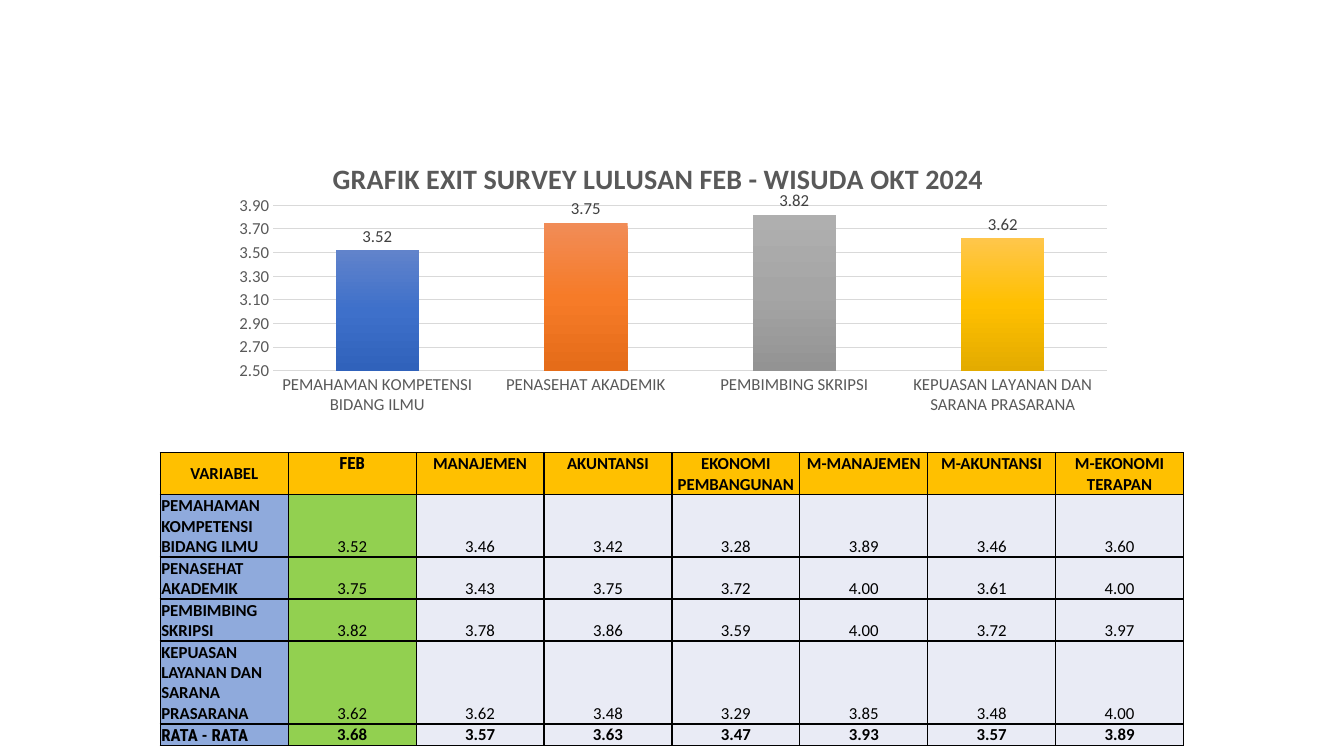
from lxml import etree
from pptx import Presentation
from pptx.chart.data import CategoryChartData
from pptx.dml.color import RGBColor
from pptx.enum.chart import XL_CHART_TYPE, XL_LABEL_POSITION, XL_TICK_MARK
from pptx.enum.text import MSO_ANCHOR, PP_ALIGN
from pptx.oxml import parse_xml
from pptx.oxml.ns import nsdecls
from pptx.util import Inches, Pt

COLUMN = XL_CHART_TYPE.COLUMN_CLUSTERED
OUTSIDE_END = XL_LABEL_POSITION.OUTSIDE_END
NO_TICK = XL_TICK_MARK.NONE
TOP, MIDDLE, BOTTOM = MSO_ANCHOR.TOP, MSO_ANCHOR.MIDDLE, MSO_ANCHOR.BOTTOM
LEFT, CENTER = PP_ALIGN.LEFT, PP_ALIGN.CENTER

BLACK = RGBColor(0x00, 0x00, 0x00)
GRAY = RGBColor(0x59, 0x59, 0x59)
DARK_GRAY = RGBColor(0x40, 0x40, 0x40)
GRID_GRAY = RGBColor(0xD9, 0xD9, 0xD9)
GOLD = RGBColor(0xFF, 0xC0, 0x00)
BLUE = RGBColor(0x8F, 0xAA, 0xDC)
GREEN = RGBColor(0x92, 0xD0, 0x50)
PALE = RGBColor(0xE9, 0xEB, 0xF5)
BAR_GRADIENTS = [
    (RGBColor(0x61, 0x83, 0xCB), RGBColor(0x3E, 0x70, 0xCA), RGBColor(0x30, 0x62, 0xBB)),
    (RGBColor(0xF1, 0x8C, 0x57), RGBColor(0xF6, 0x7B, 0x28), RGBColor(0xE5, 0x6C, 0x19)),
    (RGBColor(0xAF, 0xAF, 0xAF), RGBColor(0xA5, 0xA5, 0xA5), RGBColor(0x93, 0x93, 0x93)),
    (RGBColor(0xFF, 0xC6, 0x4B), RGBColor(0xFF, 0xC0, 0x00), RGBColor(0xE3, 0xAB, 0x00)),
]

BODY_FONT = "Calibri"
ACCENT_FONT = "Roboto Condensed"
CHART_BOX = (2.17, 1.33, 8.99, 2.83)
TABLE_BOX = (1.59, 4.49, 10.15, 2.83)
ROW_HEIGHTS = [0.32, 0.48, 0.32, 0.24, 0.56, 0.16]
TITLE = "GRAFIK EXIT SURVEY LULUSAN FEB - WISUDA OKT 2024"
HEADERS = ["VARIABEL", "FEB", "MANAJEMEN", "AKUNTANSI", "EKONOMI PEMBANGUNAN",
           "M-MANAJEMEN", "M-AKUNTANSI", "M-EKONOMI TERAPAN"]
SCORES = {
    "PEMAHAMAN KOMPETENSI BIDANG ILMU": [3.52, 3.46, 3.42, 3.28, 3.89, 3.46, 3.60],
    "PENASEHAT AKADEMIK": [3.75, 3.43, 3.75, 3.72, 4.00, 3.61, 4.00],
    "PEMBIMBING SKRIPSI": [3.82, 3.78, 3.86, 3.59, 4.00, 3.72, 3.97],
    "KEPUASAN LAYANAN DAN SARANA PRASARANA": [3.62, 3.62, 3.48, 3.29, 3.85, 3.48, 4.00],
}
AVERAGE_LABEL = "RATA - RATA"
AVERAGES = [3.68, 3.57, 3.63, 3.47, 3.93, 3.57, 3.89]


def set_font(font, size, color, bold=False, name=BODY_FONT):
    font.name = name
    font.size = Pt(size)
    font.bold = bold
    font.color.rgb = color


def layout_xml(x, y, size=None):
    parts = '<c:layoutTarget val="inner"/>' if size else ""
    parts += '<c:xMode val="edge"/><c:yMode val="edge"/>'
    parts += f'<c:x val="{x}"/><c:y val="{y}"/>'
    if size:
        parts += f'<c:w val="{size[0]}"/><c:h val="{size[1]}"/>'
    return parse_xml(f'<c:layout {nsdecls("c")}><c:manualLayout>{parts}</c:manualLayout></c:layout>')


def place_chart_parts(chart):
    title = chart._chartSpace.xpath("c:chart/c:title")[0]
    plot_area = chart._chartSpace.xpath("c:chart/c:plotArea")[0]
    for old in title.xpath("c:layout") + plot_area.xpath("c:layout"):
        old.getparent().remove(old)
    title.xpath("c:tx")[0].addnext(layout_xml(0.12, 0.07))
    plot_area.insert(0, layout_xml(0.06, 0.25, (0.92, 0.58)))


def shade_bars(chart):
    points = chart.plots[0].series[0].points
    for index in range(len(BAR_GRADIENTS)):
        fill = points[index].format.fill
        fill.gradient()
        fill.gradient_angle = 270
    stop_lists = chart._chartSpace.xpath(".//c:dPt//a:gsLst")
    for stop_list, colors in zip(stop_lists, BAR_GRADIENTS):
        for stop in list(stop_list):
            stop_list.remove(stop)
        for index, color in enumerate(colors):
            stop_list.append(parse_xml(
                f'<a:gs {nsdecls("a")} pos="{index * 50000}"><a:srgbClr val="{color}"/></a:gs>'))


def add_survey_chart(slide, box):
    data = CategoryChartData(number_format="0.00")
    data.categories = list(SCORES)
    data.add_series("FEB", [scores[0] for scores in SCORES.values()])
    chart = slide.shapes.add_chart(COLUMN, *map(Inches, box), data).chart
    set_font(chart.font, 10, BLACK)
    chart.has_legend = False
    chart.has_title = True
    paragraph = chart.chart_title.text_frame.paragraphs[0]
    paragraph.text = TITLE
    set_font(paragraph.font, 20, GRAY, bold=True)
    chart.chart_title.include_in_layout = False

    for axis in (chart.category_axis, chart.value_axis):
        axis.major_tick_mark = axis.minor_tick_mark = NO_TICK
        set_font(axis.tick_labels.font, 12, GRAY)
    chart.category_axis.format.line.color.rgb = GRID_GRAY
    chart.category_axis.format.line.width = Pt(1)
    values = chart.value_axis
    values.format.line.fill.background()
    values.minimum_scale, values.maximum_scale, values.major_unit = 2.5, 3.9, 0.2
    values.tick_labels.number_format = "0.00"
    values.tick_labels.number_format_is_linked = False
    values.major_gridlines.format.line.color.rgb = GRID_GRAY
    values.major_gridlines.format.line.width = Pt(0.75)

    plot = chart.plots[0]
    plot.gap_width = 150
    plot.vary_by_categories = False
    plot.has_data_labels = True
    labels = plot.data_labels
    labels.show_value = True
    labels.position = OUTSIDE_END
    labels.number_format = "0.00"
    labels.number_format_is_linked = False
    set_font(labels.font, 12, DARK_GRAY)
    shade_bars(chart)
    place_chart_parts(chart)


def add_borders(cell):
    properties = cell._tc.get_or_add_tcPr()
    for side in ("lnL", "lnR", "lnT", "lnB"):
        line = parse_xml(f'<a:{side} {nsdecls("a")} w="{Pt(1)}"/>')
        fill = etree.SubElement(line, line.tag.replace(side, "solidFill"))
        etree.SubElement(fill, line.tag.replace(side, "srgbClr"), val=str(BLACK))
        properties.append(line)


def fill_cell(cell, text, color, anchor, align, bold, font_name):
    add_borders(cell)
    cell.fill.solid()
    cell.fill.fore_color.rgb = color
    cell.margin_left = cell.margin_right = cell.margin_top = Inches(0.01)
    cell.margin_bottom = 0
    cell.vertical_anchor = anchor
    paragraph = cell.text_frame.paragraphs[0]
    paragraph.text = text
    paragraph.alignment = align
    set_font(paragraph.font, 12, BLACK, bold, font_name)


def add_score_table(slide, box):
    rows = [HEADERS]
    for label, scores in [*SCORES.items(), (AVERAGE_LABEL, AVERAGES)]:
        rows.append([label] + [f"{score:.2f}" for score in scores])
    table = slide.shapes.add_table(len(rows), len(HEADERS), *map(Inches, box)).table
    for column in table.columns:
        column.width = Inches(box[2] / len(HEADERS))
    for row, height in zip(table.rows, ROW_HEIGHTS):
        row.height = Inches(height)
    for row_index, texts in enumerate(rows):
        header = row_index == 0
        for column_index, text in enumerate(texts):
            label = column_index == 0
            color = GOLD if header else {0: BLUE, 1: GREEN}.get(column_index, PALE)
            anchor = BOTTOM if not header else MIDDLE if label else TOP
            align = LEFT if label and not header else CENTER
            bold = header or label or row_index == len(rows) - 1
            font_name = ACCENT_FONT if text in ("FEB", AVERAGE_LABEL) else BODY_FONT
            fill_cell(table.cell(row_index, column_index), text, color, anchor, align, bold, font_name)


def main():
    deck = Presentation()
    deck.slide_width, deck.slide_height = Inches(13.33), Inches(7.5)
    slide = deck.slides.add_slide(deck.slide_layouts[6])
    add_survey_chart(slide, CHART_BOX)
    add_score_table(slide, TABLE_BOX)
    deck.save("out.pptx")


if __name__ == "__main__":
    main()
